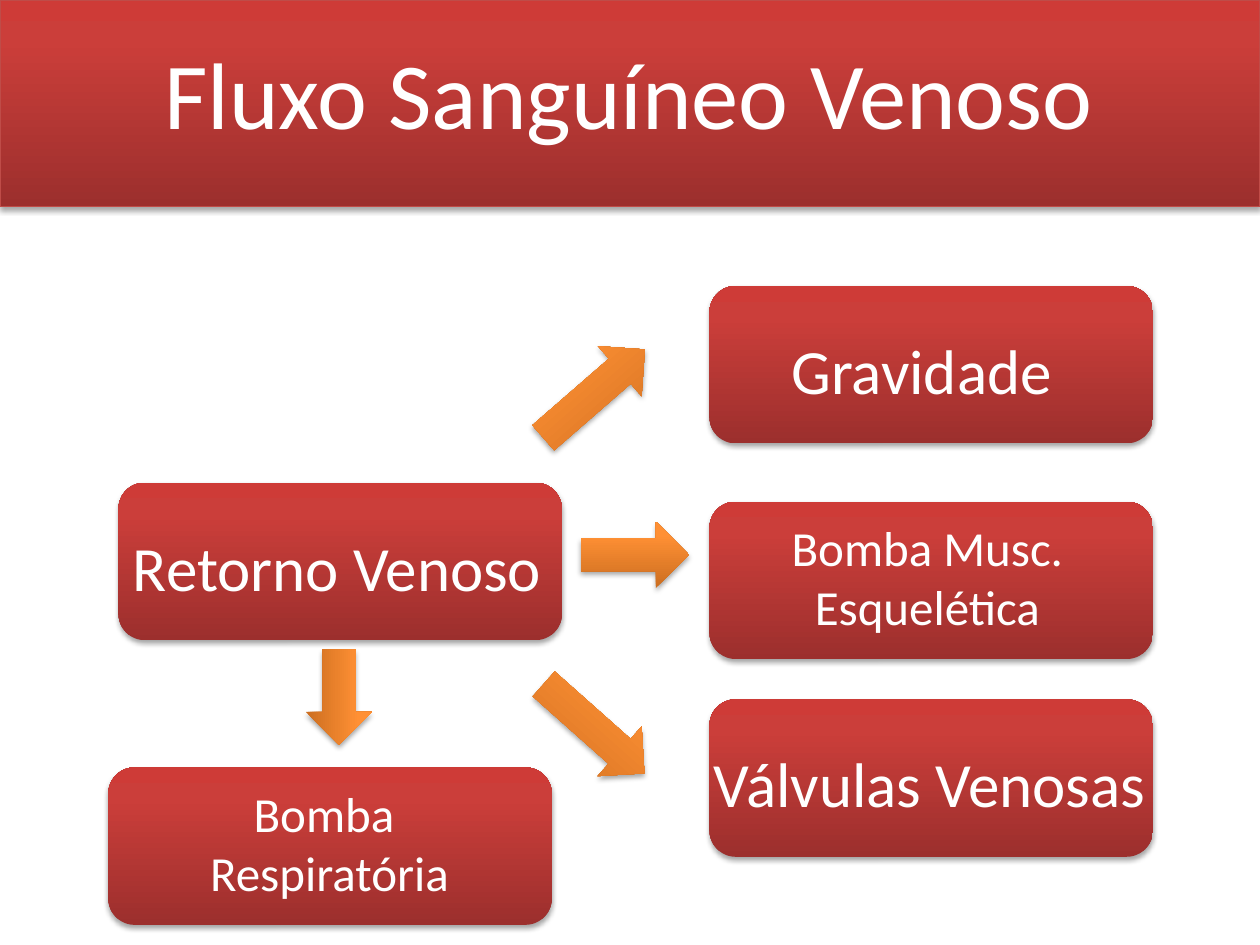
from pptx import Presentation
from pptx.dml.color import RGBColor
from pptx.enum.shapes import MSO_SHAPE
from pptx.enum.text import MSO_AUTO_SIZE, PP_ALIGN
from pptx.oxml import parse_xml
from pptx.oxml.ns import nsdecls
from pptx.util import Pt

COLORS = {"text": "FFFFFF", "band_line": "BF4C48", "shadow": "000000"}
GRADIENTS = {
    "red": {0: "9C2F2D", 80: "CB3E3A", 100: "CE3B37"},
    "orange": {0: "CC6E20", 80: "FF9034", 100: "FF9136"},
}
CARD_W, CARD_H = 253.4, 90
ARROW_H = 38
LEFT_X, RIGHT_X = 67.7, 405.4

# card left, card top, text indent, text width, lines
CARDS = [
    (61.9, 438.5, 50.4, 152, ["Bomba ", "Respiratória"]),
    (LEFT_X, 275.8, 0, 250, ["Retorno Venoso"]),
    (RIGHT_X, 163.4, 38.8, 165, ["Gravidade"]),
    (RIGHT_X, 399.6, -5.8, 263.5, ["Válvulas Venosas"]),
    (RIGHT_X, 286.6, 38.8, 171.4, ["Bomba Musc.", "Esquelética"]),
]
# left, top, width, rotation
ARROWS = [
    (301, 205.9, 77, 319),
    (331.9, 298, 61.9, 0),
    (301, 397.4, 77, 41.6),
    (166.3, 379.4, 54.7, 90),
]


def add_glossy_shape(slide, kind, x, y, w, h, gradient, line=None):
    """Add a preset shape with a vertical gradient and a soft shadow."""
    sp = slide.shapes.add_shape(kind, Pt(x), Pt(y), Pt(w), Pt(h))
    if line:
        sp.line.color.rgb = RGBColor.from_string(COLORS[line])
        sp.line.width = Pt(0.75)
    else:
        sp.line.fill.background()
    stops = "".join(
        f'<a:gs pos="{pos * 1000}"><a:srgbClr val="{color}"/></a:gs>'
        for pos, color in GRADIENTS[gradient].items())
    sp.line._get_or_add_ln().addprevious(parse_xml(
        f'<a:gradFill {nsdecls("a")} rotWithShape="1"><a:gsLst>{stops}</a:gsLst>'
        '<a:lin ang="16200000" scaled="0"/></a:gradFill>'))
    sp._element.spPr.append(parse_xml(
        f'<a:effectLst {nsdecls("a")}><a:outerShdw blurRad="{Pt(3.1)}" '
        f'dist="{Pt(1.8)}" dir="5400000" rotWithShape="0">'
        f'<a:srgbClr val="{COLORS["shadow"]}"><a:alpha val="35000"/></a:srgbClr>'
        '</a:outerShdw></a:effectLst>'))
    return sp


def add_text(slide, x, y, w, h, lines, size):
    tf = slide.shapes.add_textbox(Pt(x), Pt(y), Pt(w), Pt(h)).text_frame
    tf.word_wrap = False
    tf.auto_size = MSO_AUTO_SIZE.SHAPE_TO_FIT_TEXT
    for i, line in enumerate(lines):
        p = tf.add_paragraph() if i else tf.paragraphs[0]
        p.alignment = PP_ALIGN.CENTER
        r = p.add_run()
        r.text = line
        r.font.name = "Calibri"
        r.font.size = Pt(size)
        r.font.color.rgb = RGBColor.from_string(COLORS["text"])


def add_title_band(slide, title):
    add_glossy_shape(slide, MSO_SHAPE.RECTANGLE, 0, 0, 720, 118, "red", "band_line")
    add_text(slide, 84.2, 16.6, 550, 72.7, [title], 54)


def add_card(slide, x, y, indent, text_w, lines):
    add_glossy_shape(slide, MSO_SHAPE.ROUNDED_RECTANGLE, x, y, CARD_W, CARD_H, "red")
    drop, text_h, size = (22.4, 51, 36) if len(lines) == 1 else (5.7, 75, 28)
    add_text(slide, x + indent, y + drop, text_w, text_h, lines, size)


def add_arrow(slide, x, y, w, rotation):
    sp = add_glossy_shape(slide, MSO_SHAPE.RIGHT_ARROW, x, y, w, ARROW_H, "orange")
    sp.rotation = rotation


def main():
    prs = Presentation()
    prs.slide_width, prs.slide_height = Pt(720), Pt(540)
    slide = prs.slides.add_slide(prs.slide_layouts[6])
    add_title_band(slide, "Fluxo Sanguíneo Venoso")
    for card in CARDS:
        add_card(slide, *card)
    for arrow in ARROWS:
        add_arrow(slide, *arrow)
    prs.save("out.pptx")


if __name__ == "__main__":
    main()
